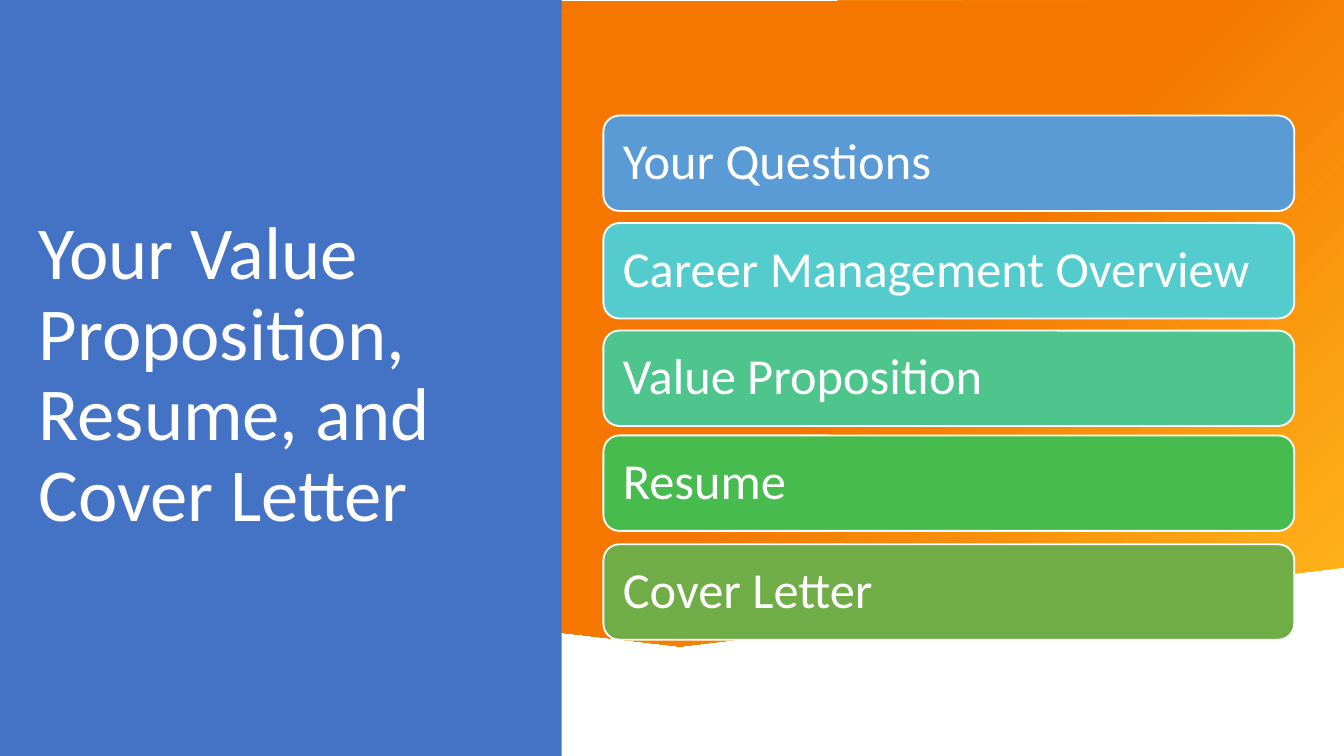
import lxml.etree
import pptx
import pptx.dml.color
import pptx.enum.shapes
import pptx.enum.text
import pptx.oxml
import pptx.oxml.ns
import pptx.util

Inches = pptx.util.Inches
Pt = pptx.util.Pt

COLORS = {
    "white": "FFFFFF",
    "panel": "4472C4",
    "orange": "F57700",
    "amber": "FFB81C",
    "blue": "5B9BD5",
    "turquoise": "54CCCD",
    "mint": "4DC58D",
    "green": "48BB4F",
    "olive": "70AD47",
}
TOPICS = [
    ("Your Questions", "blue", 0),
    ("Career Management Overview", "turquoise", 0.8),
    ("Value Proposition", "mint", 1.6),
    ("Resume", "green", 2.38),
    ("Cover Letter", "olive", 3.19),
]


def rgb(name):
    """Return the named palette colour."""
    return pptx.dml.color.RGBColor.from_string(COLORS[name])


def fill_plain(shape, color):
    """Give a shape a solid fill without outline or shadow."""
    shape.shadow.inherit = False
    shape.fill.solid()
    shape.fill.fore_color.rgb = rgb(color)
    shape.line.fill.background()


def write(frame, text, size):
    """Write one white, left-aligned paragraph centred vertically."""
    frame.word_wrap = True
    frame.vertical_anchor = pptx.enum.text.MSO_ANCHOR.MIDDLE
    paragraph = frame.paragraphs[0]
    paragraph.text = text
    paragraph.alignment = pptx.enum.text.PP_ALIGN.LEFT
    paragraph.line_spacing = 0.9
    paragraph.font.name = "Calibri"
    paragraph.font.size = Pt(size)
    paragraph.font.color.rgb = rgb("white")


def add_backdrop(slide, left, top, width, height):
    """Draw the orange banner with its pointed lower edge."""
    shoulder = top + height - 0.59
    outline = [
        (left, shoulder),
        (left + 5.06, top + height),
        (left + width, shoulder),
        (left + width - 0.01, top),
    ]
    builder = slide.shapes.build_freeform(Inches(left), Inches(top + 0.02))
    builder.add_line_segments([(Inches(x), Inches(y)) for x, y in outline], close=True)
    banner = builder.convert_to_shape()
    fill_plain(banner, "orange")
    solid = banner.element.spPr.find(pptx.oxml.ns.qn("a:solidFill"))
    gradient = pptx.oxml.parse_xml(
        f'<a:gradFill {pptx.oxml.ns.nsdecls("a")} rotWithShape="1"><a:gsLst>'
        f'<a:gs pos="61000"><a:srgbClr val="{COLORS["orange"]}"/></a:gs>'
        f'<a:gs pos="100000"><a:srgbClr val="{COLORS["amber"]}"/></a:gs></a:gsLst>'
        '<a:path path="circle"><a:fillToRect r="100000" b="100000"/></a:path>'
        "</a:gradFill>"
    )
    solid.getparent().replace(solid, gradient)


def add_title_panel(slide, left, top, width, height):
    """Draw the blue side panel with the slide title."""
    panel = slide.shapes.add_shape(
        pptx.enum.shapes.MSO_SHAPE.RECTANGLE,
        Inches(left), Inches(top), Inches(width), Inches(height),
    )
    fill_plain(panel, "panel")
    title = slide.shapes.add_textbox(
        Inches(left + 0.19), Inches(top + 1.44), Inches(width - 0.38), Inches(2.72)
    )
    write(title.text_frame, "Your Value Proposition, Resume, and Cover Letter", 40)


def add_topics(slide, left, top, width, bar_height):
    """Stack the topic bars below the given corner."""
    group = slide.shapes.add_group_shape()
    for topic, color, offset in TOPICS:
        bar = group.shapes.add_shape(
            pptx.enum.shapes.MSO_SHAPE.ROUNDED_RECTANGLE,
            Inches(left), Inches(top + offset), Inches(width), Inches(bar_height),
        )
        fill_plain(bar, color)
        bar.line.color.rgb = rgb("white")
        bar.line.width = Pt(1)
        frame = bar.text_frame
        frame.margin_left = frame.margin_right = Inches(0.11)
        frame.margin_top = frame.margin_bottom = Inches(0.11)
        write(frame, topic, 27)


def main():
    """Build and save the agenda slide."""
    deck = pptx.Presentation()
    deck.slide_width = Inches(10)
    deck.slide_height = Inches(10 * 9 / 16)
    slide = deck.slides.add_slide(deck.slide_layouts[6])
    add_backdrop(slide, 0, 0, 10.03, 4.81)
    add_title_panel(slide, 0, 0, 4.18, deck.slide_height.inches)
    add_topics(slide, 4.49, 0.86, 5.14, 0.71)
    deck.save("out.pptx")


if __name__ == "__main__":
    main()
